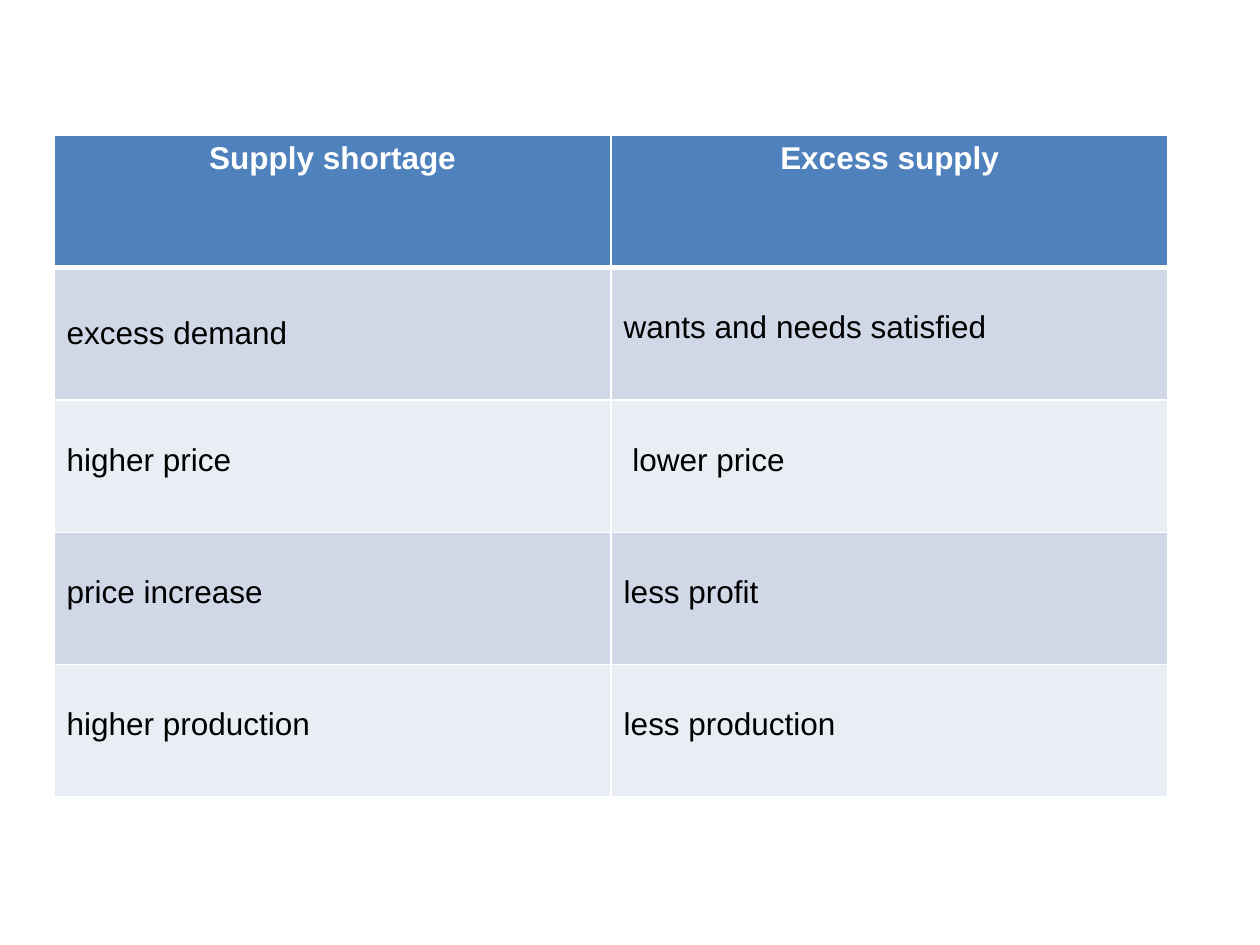
"""Build a slide with a table contrasting supply shortage and excess supply."""
from dataclasses import dataclass

from lxml import etree
from pptx import Presentation, util as u
from pptx.dml.color import RGBColor
from pptx.enum import text as t
from pptx.oxml.ns import qn
from pptx.table import Table, _Cell


@dataclass(frozen=True)
class Theme:
    font: str = "Arial"
    size: float = 18
    header_fill: str = "4F81BD"
    header_ink: str = "FFFFFF"
    bands: tuple[str, str] = ("D0D8E8", "E9EDF4")
    ink: str = "000000"
    rule: str = "FFFFFF"
    thin: float = 1
    thick: float = 3


@dataclass(frozen=True)
class Contrast:
    shortage: str
    excess: str
    shortage_centred: bool = False


THEME = Theme()
HEADINGS = Contrast("Supply shortage", "Excess supply")
EFFECTS = (
    Contrast("excess demand", "wants and needs satisfied", shortage_centred=True),
    Contrast("higher price", " lower price"),
    Contrast("price increase", "less profit"),
    Contrast("higher production", "less production"),
)
LEFT, TOP = u.Cm(1.09), u.Cm(2.72)
COLUMN_WIDTH, ROW_HEIGHT = u.Cm(11.23), u.Cm(2.67)
LOWERED_TOP = u.Cm(0.86)


def write(cell: _Cell, wording: str, *, ink: str, bold: bool = False,
          align: t.PP_ALIGN = t.PP_ALIGN.LEFT) -> None:
    paragraph = cell.text_frame.paragraphs[0]
    paragraph.alignment = align
    run = paragraph.add_run()
    run.text = wording
    run.font.name = THEME.font
    run.font.size = u.Pt(THEME.size)
    run.font.bold = bold
    run.font.color.rgb = RGBColor.from_string(ink)


def paint(cell: _Cell, fill: str, *, above: float = THEME.thin,
          below: float = THEME.thin) -> None:
    properties = cell._tc.get_or_add_tcPr()
    widths = {"a:lnL": THEME.thin, "a:lnR": THEME.thin, "a:lnT": above, "a:lnB": below}
    for side, width in widths.items():
        line = etree.SubElement(properties, qn(side), w=str(u.Pt(width)))
        solid = etree.SubElement(line, qn("a:solidFill"))
        etree.SubElement(solid, qn("a:srgbClr"), val=THEME.rule)
    cell.fill.solid()
    cell.fill.fore_color.rgb = RGBColor.from_string(fill)


def draw_headings(table: Table, headings: Contrast) -> None:
    for column, heading in enumerate((headings.shortage, headings.excess)):
        cell = table.cell(0, column)
        paint(cell, THEME.header_fill, below=THEME.thick)
        write(cell, heading, ink=THEME.header_ink, bold=True, align=t.PP_ALIGN.CENTER)


def draw_effect(table: Table, row: int, effect: Contrast) -> None:
    band = THEME.bands[(row - 1) % 2]
    above = THEME.thick if row == 1 else THEME.thin
    for column, wording in enumerate((effect.shortage, effect.excess)):
        cell = table.cell(row, column)
        paint(cell, band, above=above)
        write(cell, wording, ink=THEME.ink)
        if effect.shortage_centred and column == 0:
            cell.vertical_anchor = t.MSO_ANCHOR.MIDDLE
        else:
            cell.margin_top = LOWERED_TOP


def main() -> None:
    deck = Presentation()
    deck.slide_width, deck.slide_height = u.Cm(25.4), u.Cm(19.05)
    slide = deck.slides.add_slide(deck.slide_layouts[6])
    row_count = len(EFFECTS) + 1
    table = slide.shapes.add_table(row_count, 2, LEFT, TOP, COLUMN_WIDTH * 2,
                                   ROW_HEIGHT * row_count).table
    draw_headings(table, HEADINGS)
    for row, effect in enumerate(EFFECTS, start=1):
        draw_effect(table, row, effect)
    deck.save("out.pptx")


if __name__ == "__main__":
    main()
